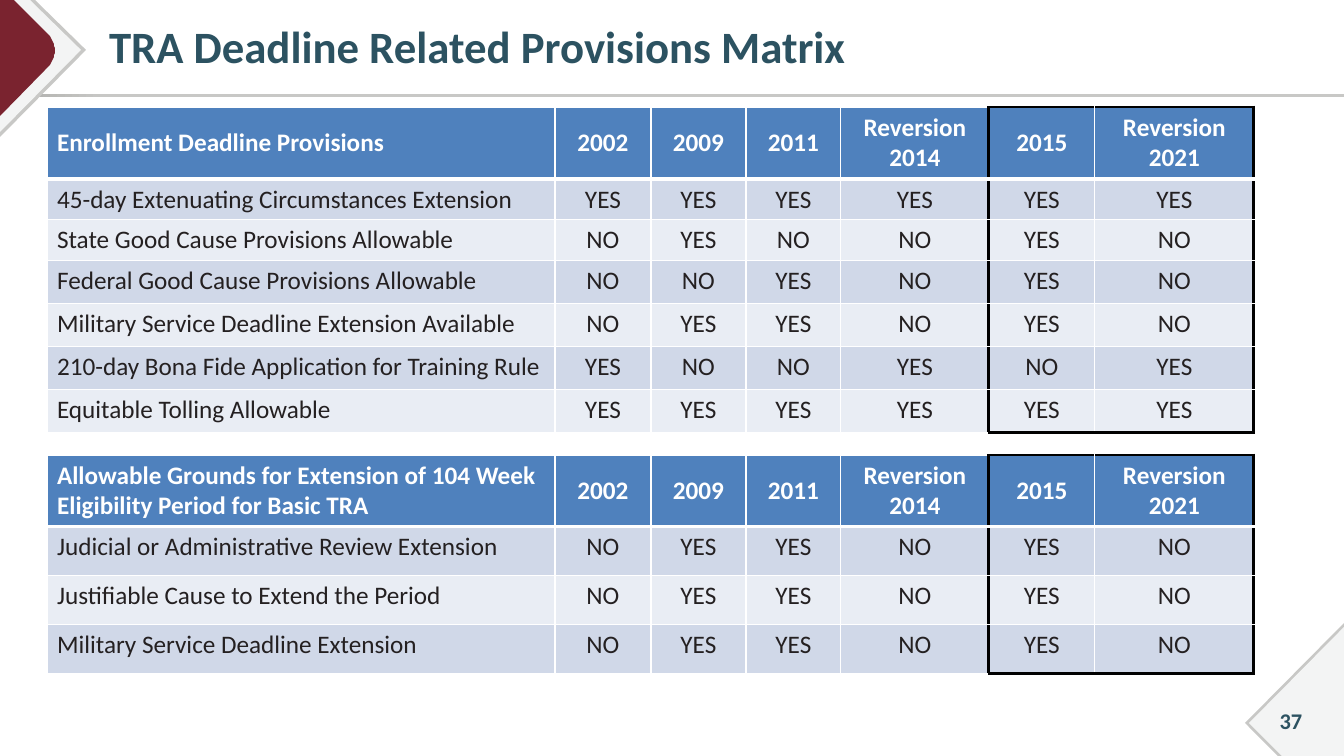
"""Build the TRA deadline related provisions matrix slide."""
import dataclasses

import lxml.etree
import pptx
import pptx.dml.color
import pptx.enum.shapes
import pptx.enum.text
import pptx.oxml.ns
import pptx.util

TITLE = "TRA Deadline Related Provisions Matrix"
SLIDE_NUMBER = "37"
YEARS = ["2002", "2009", "2011", "Reversion 2014", "2015"]
TABLES = [
    {
        "top": 107,
        "row_heights": [72, 40, 41, 43, 43, 43, 43],
        "header": ["Enrollment Deadline Provisions", *YEARS, "Reversion\n2021"],
        "rows": [
            ("45-day Extenuating Circumstances Extension", "YES YES YES YES YES YES"),
            ("State Good Cause Provisions Allowable", "NO YES NO NO YES NO"),
            ("Federal Good Cause Provisions Allowable", "NO NO YES NO YES NO"),
            ("Military Service Deadline Extension Available", "NO YES YES NO YES NO"),
            ("210-day Bona Fide Application for Training Rule", "YES NO NO YES NO YES"),
            ("Equitable Tolling Allowable", "YES YES YES YES YES YES"),
        ],
    },
    {
        "top": 455,
        "row_heights": [71, 49, 49, 49],
        "header": [
            "Allowable Grounds for Extension of 104 Week Eligibility Period for Basic TRA",
            *YEARS,
            "Reversion 2021",
        ],
        "rows": [
            ("Judicial or Administrative Review Extension", "NO YES YES NO YES NO"),
            ("Justifiable Cause to Extend the Period", "NO YES YES NO YES NO"),
            ("Military Service Deadline Extension", "NO YES YES NO YES NO"),
        ],
    },
]
TABLE_LEFT = 47
COLUMN_WIDTHS = [508, 96, 95, 95, 148, 106, 159]
FIRST_BOXED, LAST_BOXED = 5, 6
SLIDE_WIDTH, SLIDE_HEIGHT = 1344, 756
EMU_PER_PX = 12192000 / SLIDE_WIDTH


@dataclasses.dataclass(frozen=True)
class Theme:
    font: str = "Calibri"
    title_size: int = 32
    table_size: int = 18
    number_size: int = 16
    heading: str = "2C5261"
    body: str = "242021"
    white: str = "FFFFFF"
    black: str = "000000"
    header_fill: str = "4F81BD"
    odd_fill: str = "D0D8E8"
    even_fill: str = "E9EDF4"
    rule_start: str = "ABABA8"
    rule: str = "C8C8C6"
    corner: str = "F3F4F4"
    maroon: str = "7A232F"


THEME = Theme()


def px(length):
    return pptx.util.Emu(round(length * EMU_PER_PX))


def rgb(color):
    return pptx.dml.color.RGBColor.from_string(color)


def format_paragraph(paragraph, size, color, bold, centred):
    align = pptx.enum.text.PP_ALIGN
    paragraph.alignment = align.CENTER if centred else align.LEFT
    font = paragraph.font
    font.name, font.size, font.bold = THEME.font, pptx.util.Pt(size), bold
    font.color.rgb = rgb(color)


def bezier(start, first, second, end, steps=16):
    for step in range(steps + 1):
        t = step / steps
        weights = ((1 - t) ** 3, 3 * t * (1 - t) ** 2, 3 * t**2 * (1 - t), t**3)
        yield tuple(
            sum(weight * value for weight, value in zip(weights, values))
            for values in zip(start, first, second, end)
        )


def add_corner(slide, points, color):
    builder = slide.shapes.build_freeform(*points[0], scale=EMU_PER_PX)
    builder.add_line_segments(points[1:], close=True)
    shape = builder.convert_to_shape()
    shape.shadow.inherit = False
    shape.fill.solid()
    shape.fill.fore_color.rgb = rgb(color)
    shape.line.fill.background()


def add_decoration(slide):
    rule = slide.shapes.add_shape(
        pptx.enum.shapes.MSO_SHAPE.RECTANGLE, 0, px(94), px(SLIDE_WIDTH), px(3)
    )
    rule.shadow.inherit = False
    rule.line.fill.background()
    rule.fill.gradient()
    rule.fill.gradient_angle = 0
    stops = ((0, THEME.rule_start), (0.08, THEME.rule))
    for stop, (position, color) in zip(rule.fill.gradient_stops, stops):
        stop.position = position
        stop.color.rgb = rgb(color)

    for edge, color in ((0, THEME.rule), (5, THEME.corner)):
        add_corner(slide, [(0, 0), (35 - edge, 0), (86 - edge, 50), (0, 137 - edge)], color)
    tip = bezier((48, 34), (57, 43), (57, 58), (48, 67))
    add_corner(slide, [(0, 0), (14, 0), *tip, (0, 116)], THEME.maroon)
    for edge, color in ((0, THEME.rule), (4, THEME.corner)):
        add_corner(
            slide,
            [
                (SLIDE_WIDTH, 623 + edge),
                (SLIDE_WIDTH, SLIDE_HEIGHT),
                (1278 + edge, SLIDE_HEIGHT),
                (1245 + edge, 723),
            ],
            color,
        )


def cell_borders(row, column, last_row):
    thin, thick, box = (THEME.white, 1), (THEME.white, 3), (THEME.black, 2.25)
    boxed = FIRST_BOXED <= column <= LAST_BOXED
    return {
        "lnL": box if column == FIRST_BOXED else thin,
        "lnR": box if column in (FIRST_BOXED - 1, LAST_BOXED) else thin,
        "lnT": box if boxed and row == 0 else thick if row == 1 else thin,
        "lnB": box if boxed and row == last_row else thick if row == 0 else thin,
    }


def set_borders(cell, borders):
    qn = pptx.oxml.ns.qn
    properties = cell._tc.get_or_add_tcPr()
    for side, (color, width) in borders.items():
        line = lxml.etree.SubElement(properties, qn(f"a:{side}"), w=str(pptx.util.Pt(width)))
        fill = lxml.etree.SubElement(line, qn("a:solidFill"))
        lxml.etree.SubElement(fill, qn("a:srgbClr"), val=color)


def add_matrix(slide, matrix):
    heights = matrix["row_heights"]
    rows = [matrix["header"]] + [[name, *answers.split()] for name, answers in matrix["rows"]]
    table = slide.shapes.add_table(
        len(rows), len(COLUMN_WIDTHS), px(TABLE_LEFT), px(matrix["top"]),
        px(sum(COLUMN_WIDTHS)), px(sum(heights)),
    ).table
    table.horz_banding = False
    for column, width in zip(table.columns, COLUMN_WIDTHS):
        column.width = px(width)
    anchors = pptx.enum.text.MSO_ANCHOR
    for row, (values, height) in enumerate(zip(rows, heights)):
        table.rows[row].height = px(height)
        header = row == 0
        band = THEME.odd_fill if row % 2 else THEME.even_fill
        for column, value in enumerate(values):
            cell = table.cell(row, column)
            cell.text = value
            cell.vertical_anchor = anchors.MIDDLE if header else anchors.TOP
            set_borders(cell, cell_borders(row, column, len(rows) - 1))
            cell.fill.solid()
            cell.fill.fore_color.rgb = rgb(THEME.header_fill if header else band)
            color = THEME.white if header else THEME.body
            for paragraph in cell.text_frame.paragraphs:
                format_paragraph(paragraph, THEME.table_size, color, header, column > 0)


def fill_heading(shape, text, size, centred):
    frame = shape.text_frame
    frame.text = text
    frame.word_wrap = True
    frame.auto_size = pptx.enum.text.MSO_AUTO_SIZE.NONE
    frame.vertical_anchor = pptx.enum.text.MSO_ANCHOR.MIDDLE
    format_paragraph(frame.paragraphs[0], size, THEME.heading, True, centred)


def main():
    presentation = pptx.Presentation()
    presentation.slide_width, presentation.slide_height = px(SLIDE_WIDTH), px(SLIDE_HEIGHT)
    slide = presentation.slides.add_slide(presentation.slide_layouts[5])
    add_decoration(slide)
    title = slide.shapes.title
    title.left, title.top, title.width, title.height = px(89), px(5), px(1222), px(87)
    fill_heading(title, TITLE, THEME.title_size, False)
    title.text_frame.margin_left = px(20)
    title.text_frame.paragraphs[0].line_spacing = 0.9
    number = slide.shapes.add_textbox(px(1255), px(701), px(72), px(40))
    fill_heading(number, SLIDE_NUMBER, THEME.number_size, True)
    for matrix in TABLES:
        add_matrix(slide, matrix)
    presentation.save("out.pptx")


if __name__ == "__main__":
    main()
